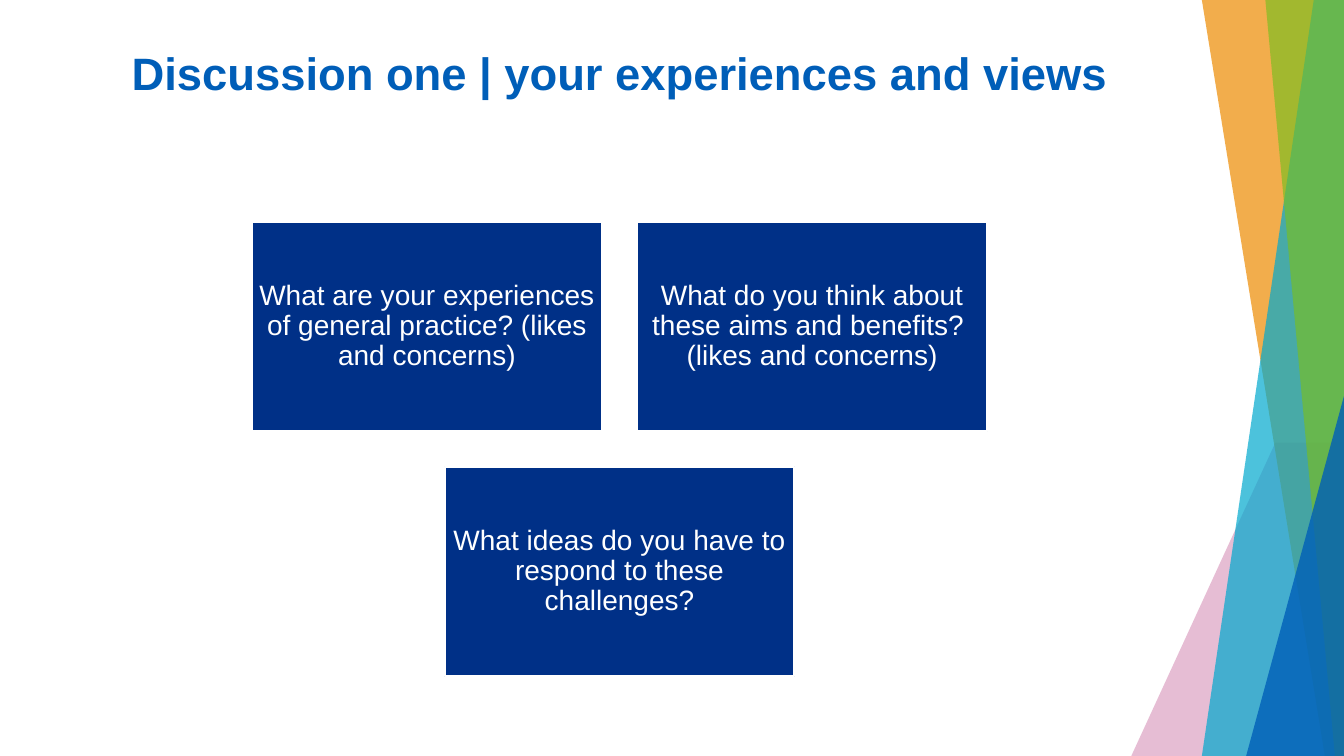
from lxml import etree
from pptx import Presentation
from pptx import util as u
from pptx.dml.color import RGBColor
from pptx.enum import shapes, text
from pptx.oxml.ns import qn

Inches = u.Inches
HUES = {"pink": "AE2573", "amber": "ED8B00", "aqua": "00A9CE", "green": "78BE20",
        "blue": "005EB8", "navy": "003087", "white": "FFFFFF"}


def paint(shape, hue, alpha=100):
    shape.shadow.inherit = False
    shape.fill.solid()
    shape.fill.fore_color.rgb = RGBColor.from_string(HUES[hue])
    shape.line.fill.background()
    if alpha < 100:
        tint = shape.fill._xPr.find(qn("a:solidFill"))[0]
        etree.SubElement(tint, qn("a:alpha")).set("val", str(alpha * 1000))


def write(shape, words, size=20, hue="white", bold=False, inset=0.07):
    frame = shape.text_frame
    frame.word_wrap = True
    frame.vertical_anchor = text.MSO_ANCHOR.MIDDLE
    frame.margin_left = frame.margin_right = Inches(inset)
    para = frame.paragraphs[0]
    para.text = words
    para.alignment = text.PP_ALIGN.CENTER
    para.line_spacing = 0.9
    for run in para.runs:
        run.font.name = "Arial"
        run.font.size = u.Pt(size)
        run.font.bold = bold
        run.font.color.rgb = RGBColor.from_string(HUES[hue])


deck = Presentation()
deck.slide_width, deck.slide_height = Inches(13.33), Inches(7.5)
slide = deck.slides.add_slide(deck.slide_layouts[6])
items = slide.shapes

# Overlapping bands, each running to the right edge: top, top left, foot left points
RIGHT, FOOT = 13.33, 7.5
bands = [
    ("pink", 30, 4.39, 12.65, 11.22),
    ("amber", 70, 0, 11.92, 13.14),
    ("aqua", 70, 0, 13.03, 11.92),
    ("green", 65, 0, 12.55, 13.24),
]
for hue, alpha, top, head, base in bands:
    pen = items.build_freeform(Inches(head), Inches(top))
    pen.add_line_segments([(Inches(x), Inches(y)) for x, y in
                           [(RIGHT, top), (RIGHT, FOOT), (base, FOOT)]])
    paint(pen.convert_to_shape(), hue, alpha)

# Front corner triangle
wedge = items.add_shape(shapes.MSO_SHAPE.ISOSCELES_TRIANGLE, Inches(12.36), Inches(3.93),
                        Inches(0.97), Inches(3.57))
wedge.adjustments[0] = 1
paint(wedge, "blue", 80)

# Title
title = items.add_textbox(Inches(0.74), Inches(0.35), Inches(10.81), Inches(0.81))
write(title, "Discussion one | your experiences and views", size=32.4, hue="blue",
      bold=True, inset=0.1)

# Question cards: two on top, one centred below
WIDE, HIGH, GAP = 3.47, 2.08, 0.35
LEFT, TOP = 2.5, 2.2
cards = [
    (0, 0, "What are your experiences of general practice? (likes and concerns)"),
    (1, 0, "What do you think about these aims and benefits? \v(likes and concerns)"),
    (0.5, 1, "What ideas do you have to respond to these challenges?"),
]
for col, row, words in cards:
    card = items.add_shape(shapes.MSO_SHAPE.RECTANGLE,
                           Inches(LEFT + col * (WIDE + GAP)), Inches(TOP + row * (HIGH + GAP)),
                           Inches(WIDE), Inches(HIGH))
    paint(card, "navy")
    card.line.color.rgb = RGBColor.from_string(HUES["white"])
    card.line.width = u.Pt(1.5)
    write(card, words)

deck.save("out.pptx")
